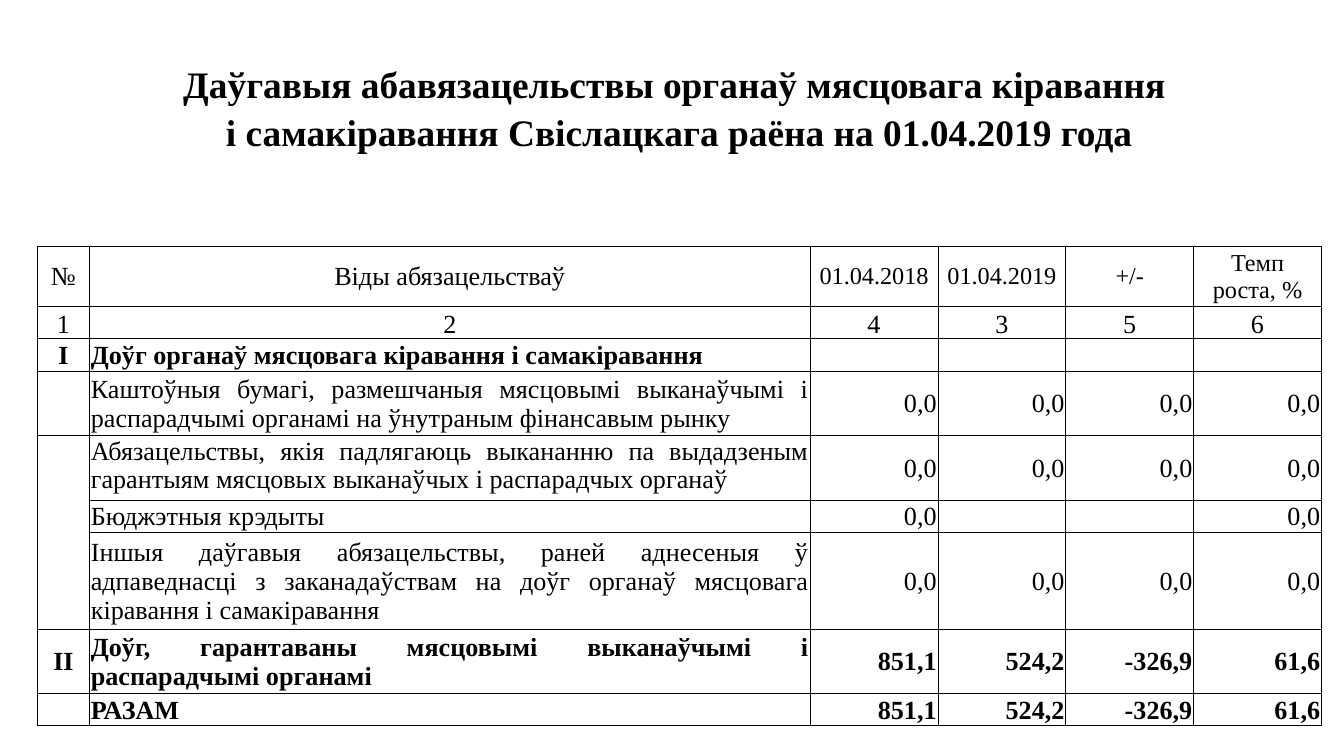
from lxml.etree import SubElement
from pptx import Presentation
from pptx.dml.color import RGBColor
from pptx.enum.text import MSO_ANCHOR, PP_ALIGN
from pptx.oxml.ns import qn
from pptx.util import Pt

COLORS = {"text": "000000", "border": "000000", "cell": "FFFFFF"}
FONT = "Times New Roman"
NO_STYLE = "{2D5ABB26-0587-4C30-8999-92F81FD0307C}"
COLUMN_WIDTHS = [28, 386, 68.5, 68.5, 68.5, 68.5]
ROW_HEIGHTS = [28, 54.8, 28.8, 20.2, 32.4, 17.3, 17.3, 34.6, 34.6, 17.3, 51.8, 34.6, 17.3]
FIRST_ROW = 4  # the rows above it span the whole table and hold the title

title_lines = [
    "Даўгавыя абавязацельствы органаў мясцовага кіравання ",
    "і самакіравання Свіслацкага раёна на 01.04.2019 года",
]
zeros = ["0,0"] * 4
totals = ["851,1", "524,2", "-326,9", "61,6"]
debt_rows = [
    ["№", "Віды абязацельстваў", "01.04.2018", "01.04.2019", "+/-", "Темп\nроста, %"],
    ["1", "2", "4", "3", "5", "6"],
    ["I", "Доўг органаў мясцовага кіравання і самакіравання", "", "", "", ""],
    ["", "Каштоўныя бумагі, размешчаныя мясцовымі выканаўчымі і "
         "распарадчымі органамі на ўнутраным фінансавым рынку", *zeros],
    ["", "Абязацельствы, якія падлягаюць выкананню па выдадзеным "
         "гарантыям мясцовых выканаўчых і распарадчых органаў", *zeros],
    ["", "Бюджэтныя крэдыты", "0,0", "", "", "0,0"],
    ["", "Іншыя даўгавыя абязацельствы, раней аднесеныя ў адпаведнасці з "
         "заканадаўствам на доўг органаў мясцовага кіравання і самакіравання", *zeros],
    ["II", "Доўг, гарантаваны мясцовымі выканаўчымі і распарадчымі органамі", *totals],
    ["", "РАЗАМ", *totals],
]
HEADER, NUMBERS, FIRST_ITEM, TOP_ITEM, LAST_ITEM, TOTAL = 0, 1, 3, 4, 6, 8
BOLD_ROWS = {2, 7, 8}


def write_cell(cell, lines, size, bold, align, anchor, line_spacing=None):
    cell.margin_left = cell.margin_right = cell.margin_top = Pt(0.7)
    cell.margin_bottom = 0
    cell.vertical_anchor = anchor
    frame = cell.text_frame
    for index, line in enumerate(lines):
        para = frame.paragraphs[0] if index == 0 else frame.add_paragraph()
        para.alignment = align
        if line_spacing:
            para.line_spacing = line_spacing
        if not line:
            # an empty cell keeps a small text size so that its row stays low
            SubElement(para._p, qn("a:endParaRPr"), sz=str(size * 100))
            continue
        run = para.add_run()
        run.text = line
        run.font.name = FONT
        run.font.size = Pt(size)
        run.font.bold = bold
        run.font.color.rgb = RGBColor.from_string(COLORS["text"])


def set_borders(cell, sides):
    """Draw thin lines on the given sides, listed in the order L, R, T, B."""
    properties = cell._tc.get_or_add_tcPr()
    for side in sides:
        line = SubElement(properties, qn(f"a:ln{side}"), w=str(Pt(0.5)))
        fill = SubElement(line, qn("a:solidFill"))
        SubElement(fill, qn("a:srgbClr"), val=COLORS["border"])


deck = Presentation()
deck.slide_width, deck.slide_height = Pt(720), Pt(405)
page = deck.slides.add_slide(deck.slide_layouts[6])

frame = page.shapes.add_table(len(ROW_HEIGHTS), len(COLUMN_WIDTHS), Pt(20), 0,
                              Pt(sum(COLUMN_WIDTHS)), Pt(sum(ROW_HEIGHTS)))
table = frame.table
table.first_row = table.horz_banding = False
table._tbl.tblPr.find(qn("a:tableStyleId")).text = NO_STYLE
for column, width in zip(table.columns, COLUMN_WIDTHS):
    column.width = Pt(width)
for row, height in zip(table.rows, ROW_HEIGHTS):
    row.height = Pt(height)

# Title band
for row in range(FIRST_ROW):
    band = table.cell(row, 0)
    band.merge(table.cell(row, len(COLUMN_WIDTHS) - 1))
    lines = title_lines if row == 1 else [""]
    write_cell(band, lines, 20 if row == 1 else 12, True, PP_ALIGN.CENTER,
               MSO_ANCHOR.BOTTOM, 1.15 if row == 1 else None)
    if row == FIRST_ROW - 1:
        for column in range(len(COLUMN_WIDTHS)):
            set_borders(table.cell(row, column), "B")

# Debt table
for row, values in enumerate(debt_rows):
    for column, value in enumerate(values):
        cell = table.cell(FIRST_ROW + row, column)

        if column == 0 or row in (HEADER, NUMBERS):
            align = PP_ALIGN.CENTER
        elif column > 1:
            align = PP_ALIGN.RIGHT
        else:
            align = PP_ALIGN.LEFT if row == TOTAL else PP_ALIGN.JUSTIFY

        anchor = MSO_ANCHOR.MIDDLE
        if row == NUMBERS:
            anchor = MSO_ANCHOR.BOTTOM
        elif row == TOP_ITEM and column == 1:
            anchor = MSO_ANCHOR.TOP

        size = 13 if row == HEADER and column > 1 else 14
        write_cell(cell, value.split("\n"), size if value else 12,
                   row in BOLD_ROWS, align, anchor)

        # the number column is left undivided beside the items of part I
        sides = "LRTB"
        if column == 0 and FIRST_ITEM < row <= LAST_ITEM:
            sides = sides.replace("T", "")
        if column == 0 and FIRST_ITEM <= row < LAST_ITEM:
            sides = sides.replace("B", "")
        set_borders(cell, sides)

        if column > 1 and row > NUMBERS:
            cell.fill.solid()
            cell.fill.fore_color.rgb = RGBColor.from_string(COLORS["cell"])

deck.save("out.pptx")
